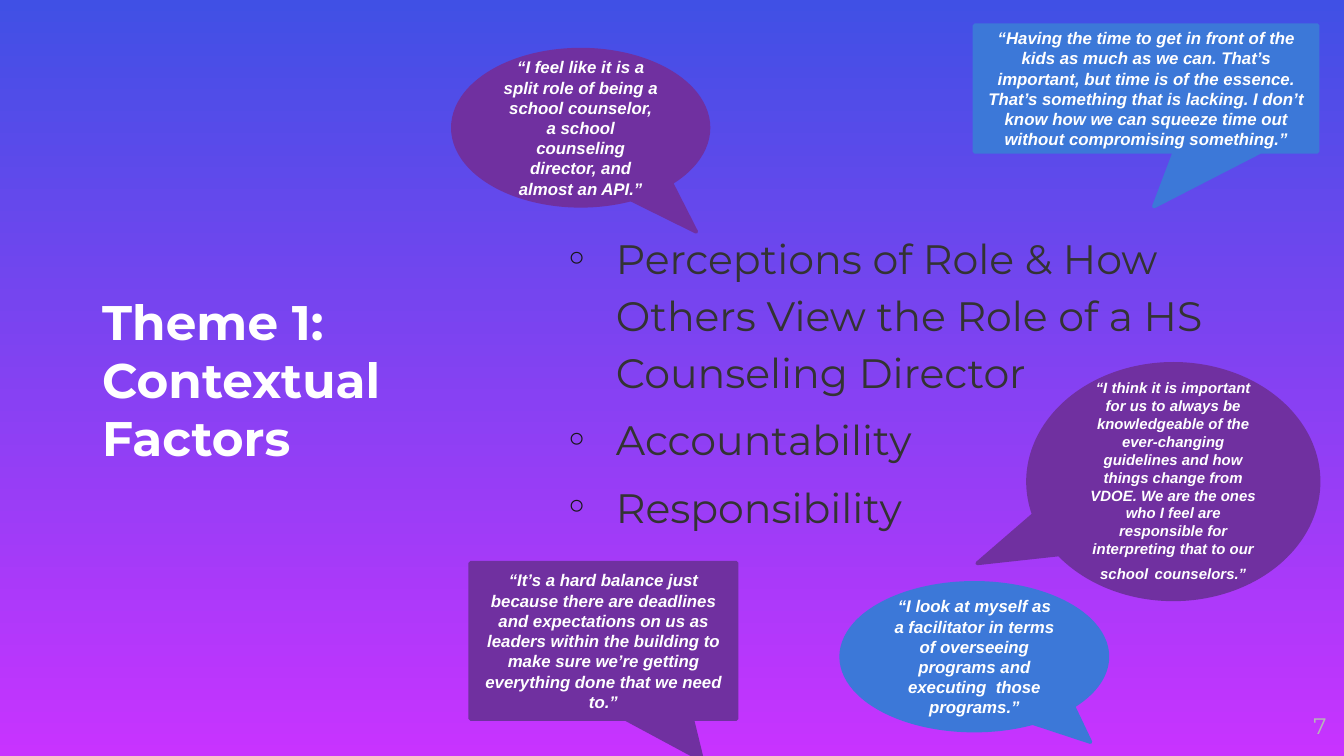
from dataclasses import dataclass

from lxml.etree import SubElement
from pptx import Presentation
from pptx.dml.color import RGBColor
from pptx.enum.shapes import MSO_SHAPE
from pptx.enum.text import MSO_ANCHOR, PP_ALIGN
from pptx.oxml.ns import qn
from pptx.util import Cm, Pt

WHITE, BLUE, PURPLE = "FFFFFF", "3C78D8", "7030A0"
ELLIPSE = MSO_SHAPE.OVAL_CALLOUT
RECTANGLE = MSO_SHAPE.RECTANGULAR_CALLOUT


@dataclass(frozen=True)
class Box:
    left: float
    top: float
    width: float
    height: float

    def lengths(self) -> list:
        return [Cm(v) for v in (self.left, self.top, self.width, self.height)]


@dataclass(frozen=True)
class Quote:
    outline: MSO_SHAPE
    box: Box
    pointer: tuple[float, float]
    color: str
    words: str
    size: int = 9
    closing: str = ""  # last word, set off by a larger space


QUOTES = [
    Quote(ELLIPSE, Box(15.9, 11.02, 5.03, 2.79), (0.436, 0.578), BLUE,
          "“I look at myself as a facilitator in terms of overseeing programs "
          "and executing  those programs.”"),
    Quote(ELLIPSE, Box(8.56, 0.94, 4.83, 2.95), (0.452, 0.667), PURPLE,
          "“I feel like it is a split role of being a school counselor, a school "
          "counseling director, and almost an API.”"),
    Quote(RECTANGLE, Box(18.42, 0.48, 6.48, 2.39), (0.023, 0.933), BLUE,
          "“Having the time to get in front of the kids as much as we can. That’s "
          "important, but time is of the essence. That’s something that is lacking. "
          "I don’t know how we can squeeze time out without compromising something.”"),
    Quote(RECTANGLE, Box(8.89, 10.64, 5.03, 2.95), (0.371, 0.764), PURPLE,
          "“It’s a hard balance just because there are deadlines and expectations "
          "on us as leaders within the building to make sure we’re getting "
          "everything done that we need to.”"),
    Quote(ELLIPSE, Box(19.43, 6.88, 5.49, 4.45), (-0.675, 0.347), PURPLE,
          "“I think it is important for us to always be knowledgeable of the "
          "ever-changing guidelines and how things change from VDOE. We are the ones "
          "who I feel are responsible for interpreting that to our school",
          8, "counselors.”"),
]
FACTORS = [
    "Perceptions of Role & How Others View the Role of a HS Counseling Director",
    "Accountability",
    "Responsibility",
]


def rgb(color: str) -> RGBColor:
    return RGBColor.from_string(color)


def format_run(run, size: float, color: str, name: str = "Montserrat",
               bold: bool = False, italic: bool = False) -> None:
    font = run.font
    font.size, font.name, font.bold, font.italic = Pt(size), name, bold, italic
    font.color.rgb = rgb(color)


def add_text(slide, box: Box, text: str, size: float, color: str, bold: bool = False):
    frame = slide.shapes.add_textbox(*box.lengths()).text_frame
    frame.word_wrap = True
    frame.vertical_anchor = MSO_ANCHOR.MIDDLE
    frame.margin_left = frame.margin_right = frame.margin_top = frame.margin_bottom = 0
    frame.text = text
    for paragraph in frame.paragraphs:
        for run in paragraph.runs:
            format_run(run, size, color, bold=bold)
    return frame


def add_text_shadow(run) -> None:
    effects = SubElement(run.font._element, qn("a:effectLst"))
    shadow = SubElement(effects, qn("a:outerShdw"), blurRad="38100", dist="25400",
                        dir="2700000", algn="tl")
    shade = SubElement(shadow, qn("a:srgbClr"), val="000000")
    SubElement(shade, qn("a:alpha"), val="40000")
    # Effects belong right after the fill, ahead of the typeface
    run.font._element.find(qn("a:solidFill")).addnext(effects)


def add_bullet(paragraph, color: str) -> None:
    properties = paragraph._p.get_or_add_pPr()
    indent = Cm(0.97)
    properties.set("marL", str(indent))
    properties.set("indent", str(-indent))
    SubElement(SubElement(properties, qn("a:buClr")), qn("a:srgbClr"), val=color)
    SubElement(properties, qn("a:buFont"), typeface="Montserrat")
    SubElement(properties, qn("a:buChar"), char="◦")


def add_quote(slide, quote: Quote) -> None:
    bubble = slide.shapes.add_shape(quote.outline, *quote.box.lengths())
    bubble.shadow.inherit = False
    for index, offset in enumerate(quote.pointer):
        bubble.adjustments[index] = offset
    bubble.fill.solid()
    bubble.fill.fore_color.rgb = bubble.line.color.rgb = rgb(quote.color)
    bubble.line.width = Pt(2)
    frame = bubble.text_frame
    frame.word_wrap = True
    frame.vertical_anchor = MSO_ANCHOR.MIDDLE
    paragraph = frame.paragraphs[0]
    paragraph.alignment = PP_ALIGN.CENTER
    parts = [(quote.words, quote.size)]
    if quote.closing:
        parts += [(" ", 12), (quote.closing, quote.size)]
    for words, size in parts:
        run = paragraph.add_run()
        run.text = words
        format_run(run, size, WHITE, "Arial", bold=True, italic=True)


def main() -> None:
    deck = Presentation()
    deck.slide_width, deck.slide_height = Cm(25.4), Cm(14.29)
    slide = deck.slides.add_slide(deck.slide_layouts[6])

    # Background, top to bottom
    backdrop = slide.background.fill
    backdrop.gradient()
    backdrop.gradient_angle = 270
    for stop, position, color in zip(backdrop.gradient_stops, (0, 1), ("4050E5", "C833FF")):
        stop.position = position
        stop.color.rgb = rgb(color)

    # Title
    title = add_text(slide, Box(1.93, 2.54, 5.61, 9.25),
                     "Theme 1:\vContextual Factors", 26, WHITE, bold=True)
    for run in title.paragraphs[0].runs:
        add_text_shadow(run)

    # Factors
    factors = add_text(slide, Box(10.67, 2.24, 13.46, 9.86), "\n".join(FACTORS), 22, "333333")
    for index, paragraph in enumerate(factors.paragraphs):
        paragraph.line_spacing = 1.15
        paragraph.space_before = Pt(6 if index else 0)
        add_bullet(paragraph, "171717")

    # Page number
    number = add_text(slide, Box(23.55, 13.18, 1.52, 1.09), "7", 12, "B7B7B7")
    number.paragraphs[0].alignment = PP_ALIGN.RIGHT

    # Quotes
    for quote in QUOTES:
        add_quote(slide, quote)

    deck.save("out.pptx")


if __name__ == "__main__":
    main()
